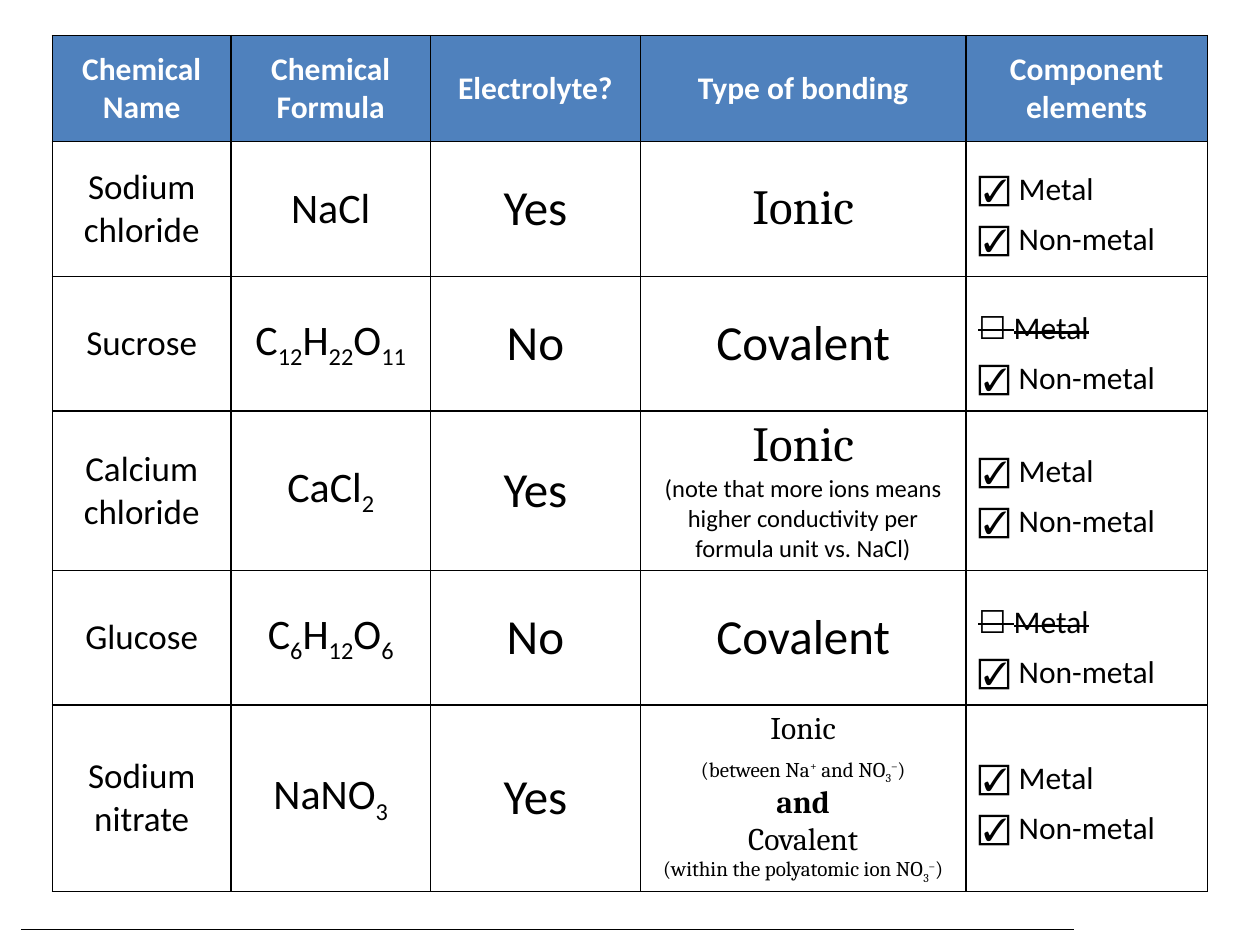
from itertools import groupby
from lxml import etree
from pptx import Presentation
from pptx.dml.color import RGBColor
from pptx.enum.shapes import MSO_CONNECTOR
from pptx.enum.text import MSO_ANCHOR, PP_ALIGN
from pptx.oxml.ns import qn
from pptx.util import Pt

COLORS = {"header": "4F81BD", "body": "FFFFFF", "light": "FFFFFF", "ink": "000000"}
COLUMN_WIDTHS = [102, 114, 120, 186, 138]
ROW_HEIGHTS = [60.5, 77, 77, 91, 77, 106.5]
HEADERS = ["Chemical Name", "Chemical Formula", "Electrolyte?", "Type of bonding",
           "Component elements"]

# Bonding lines: text, size, font, bold, space before
IONIC = [("Ionic", 28, "Cambria", False, 0)]
COVALENT = [("Covalent", 28, "Calibri", False, 0)]
MORE_IONS = [("(note that more ions means higher conductivity per formula unit vs. NaCl)",
              14, "Calibri", False, 0)]
MIXED = [
    ("Ionic", 18, "Cambria", False, 0),
    ("(between Na+ and NO3–)", 12, "Cambria", False, 6),
    ("and", 18, "Cambria", True, 0),
    ("Covalent", 18, "Cambria", False, 0),
    ("(within the polyatomic ion NO3–)", 12, "Cambria", False, 0),
]

# Name, formula, electrolyte, bonding lines, contains a metal
COMPOUNDS = [
    ("Sodium chloride", "NaCl", "Yes", IONIC, True),
    ("Sucrose", "C12H22O11", "No", COVALENT, False),
    ("Calcium chloride", "CaCl2", "Yes", IONIC + MORE_IONS, True),
    ("Glucose", "C6H12O6", "No", COVALENT, False),
    ("Sodium nitrate", "NaNO3", "Yes", MIXED, True),
]


def color(name):
    return RGBColor.from_string(COLORS[name])


def baseline(character):
    """Digits are subscripts and charges are superscripts."""
    if character.isdigit():
        return -25
    return 30 if character in "+–" else 0


def add_run(paragraph, text, size, font="Calibri", bold=False, ink="ink"):
    run = paragraph.add_run()
    run.text = text
    run.font.size = Pt(size)
    run.font.name = font
    run.font.bold = bold
    run.font.color.rgb = color(ink)
    return run


def next_paragraph(cell, index):
    frame = cell.text_frame
    return frame.add_paragraph() if index else frame.paragraphs[0]


def write_lines(cell, lines, ink="ink"):
    for index, (text, size, font, bold, space) in enumerate(lines):
        paragraph = next_paragraph(cell, index)
        paragraph.alignment = PP_ALIGN.CENTER
        if space:
            paragraph.space_before = Pt(space)
        for offset, characters in groupby(text, baseline):
            run = add_run(paragraph, "".join(characters), size, font, bold, ink)
            if offset:
                run.font._element.set("baseline", str(offset * 1000))


def write_checklist(cell, items):
    for index, (label, checked) in enumerate(items):
        paragraph = next_paragraph(cell, index)
        paragraph.line_spacing = 1.3
        mark, font = ("☑ ", "Arial") if checked else ("☐ ", "Noto Sans CJK JP")
        mark_run = add_run(paragraph, mark, 18, font)
        etree.SubElement(mark_run.font._element, qn("a:ea")).set("typeface", font)
        label_run = add_run(paragraph, label, 18)
        if not checked:
            for run in (mark_run, label_run):
                run.font._element.set("strike", "sngStrike")


def style_cell(cell, fill):
    cell.vertical_anchor = MSO_ANCHOR.MIDDLE
    properties = cell._tc.get_or_add_tcPr()
    for side in ("a:lnL", "a:lnR", "a:lnT", "a:lnB"):
        border = etree.SubElement(properties, qn(side), w=str(Pt(1)))
        solid = etree.SubElement(border, qn("a:solidFill"))
        etree.SubElement(solid, qn("a:srgbClr"), val=COLORS["ink"])
    cell.fill.solid()
    cell.fill.fore_color.rgb = color(fill)


def add_compound_table(slide, left, top, width, height):
    table = slide.shapes.add_table(len(ROW_HEIGHTS), len(COLUMN_WIDTHS), Pt(left), Pt(top),
                                   Pt(width), Pt(height)).table
    for column, column_width in zip(table.columns, COLUMN_WIDTHS):
        column.width = Pt(column_width)
    for index, (row, row_height) in enumerate(zip(table.rows, ROW_HEIGHTS)):
        row.height = Pt(row_height)
        for cell in row.cells:
            style_cell(cell, "body" if index else "header")
    for column, header in enumerate(HEADERS):
        write_lines(table.cell(0, column), [(header, 18, "Calibri", True, 0)], "light")
    for row, (name, formula, electrolyte, bonding, has_metal) in enumerate(COMPOUNDS, 1):
        for column, (text, size) in enumerate([(name, 20), (formula, 24), (electrolyte, 28)]):
            write_lines(table.cell(row, column), [(text, size, "Calibri", False, 0)])
        write_lines(table.cell(row, 3), bonding)
        write_checklist(table.cell(row, 4), [("Metal", has_metal), ("Non-metal", True)])


def add_footer_rule(slide, left, top, width):
    rule = slide.shapes.add_connector(MSO_CONNECTOR.STRAIGHT, Pt(left), Pt(top),
                                      Pt(left + width), Pt(top))
    rule.line.color.rgb = color("ink")
    rule.line.width = Pt(0.75)
    etree.SubElement(rule._element.spPr, qn("a:effectLst"))


def main():
    presentation = Presentation()
    presentation.slide_width, presentation.slide_height = Pt(720), Pt(540)
    slide = presentation.slides.add_slide(presentation.slide_layouts[6])
    add_footer_rule(slide, 12, 531, 602)
    add_compound_table(slide, 30, 20.4, sum(COLUMN_WIDTHS), sum(ROW_HEIGHTS))
    presentation.save("out.pptx")


if __name__ == "__main__":
    main()
